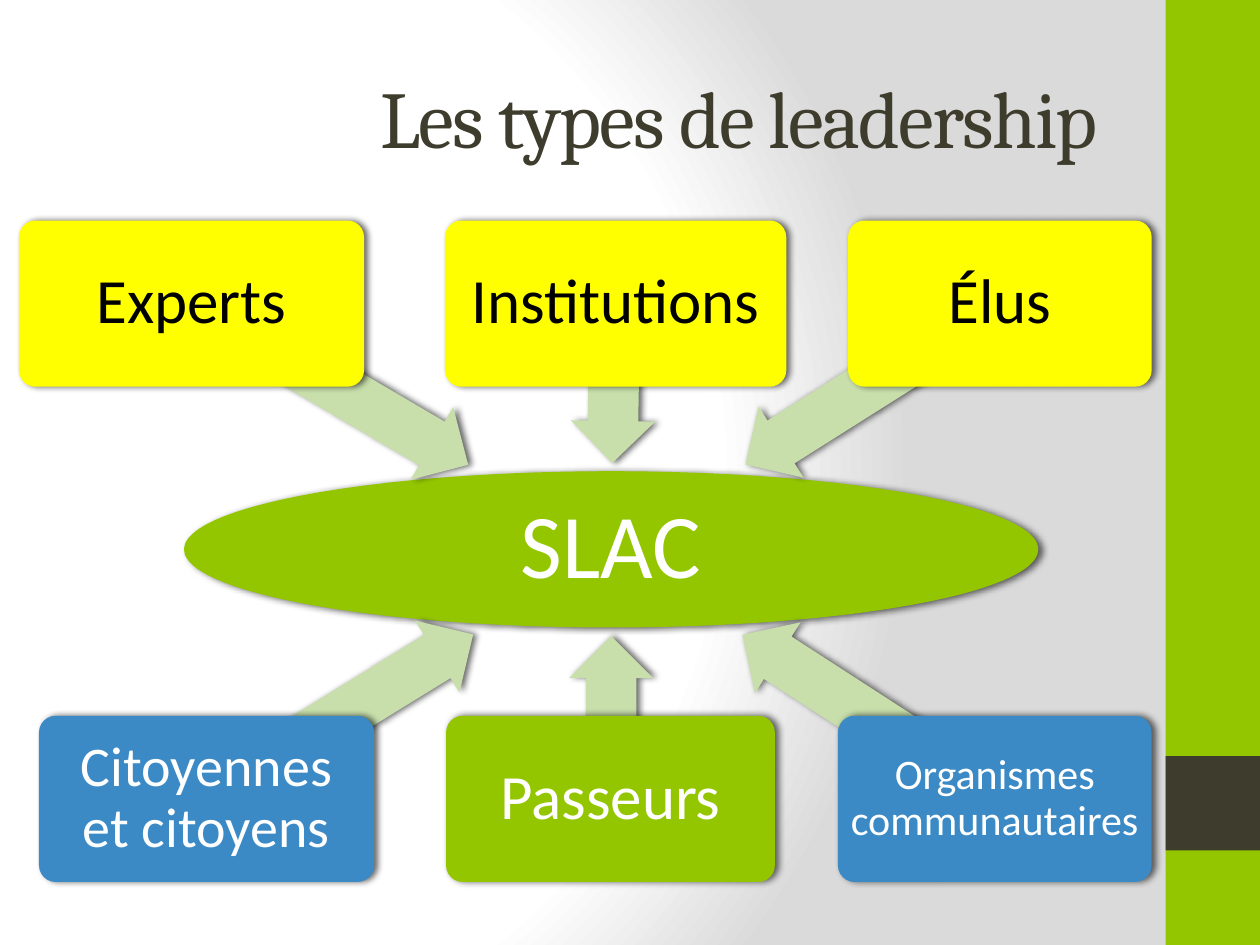
from dataclasses import dataclass

from pptx import Presentation
from pptx.dml.color import RGBColor
from pptx.enum.shapes import MSO_SHAPE
from pptx.enum.text import MSO_ANCHOR, PP_ALIGN
from pptx.oxml import parse_xml
from pptx.oxml.ns import nsdecls
from pptx.util import Pt

RECT = MSO_SHAPE.RECTANGLE
OVAL = MSO_SHAPE.OVAL
ROUND = MSO_SHAPE.ROUNDED_RECTANGLE
ARROW = MSO_SHAPE.LEFT_ARROW
CENTER = PP_ALIGN.CENTER
MIDDLE = MSO_ANCHOR.MIDDLE


@dataclass(frozen=True)
class Theme:
    green: str = "94C600"
    dark: str = "3E3D2D"
    pale: str = "C8DFAB"
    yellow: str = "FFFF00"
    blue: str = "3B8AC6"
    white: str = "FFFFFF"
    black: str = "000000"
    grey: str = "DADADA"
    heading: str = "Cambria"
    body: str = "Calibri"
    title_size: float = 46
    hub_size: float = 52
    large: float = 36
    medium: float = 32
    small: float = 24


T = Theme()
BOX_H = 95
ARROW_H = 48.2
TOP_ROW = (126, 195.2)
BOTTOM_ROW = (409, 385.4)


def set_background(slide):
    slide.background.fill.gradient()
    grad = slide.element.xpath(".//p:bg//a:gradFill")[0]
    grad.clear()
    stops = "".join(
        f'<a:gs pos="{pos * 1000}"><a:srgbClr val="{color}"/></a:gs>'
        for pos, color in ((0, T.white), (75, T.white), (100, T.grey))
    )
    grad.append(parse_xml(f'<a:gsLst {nsdecls("a")}>{stops}</a:gsLst>'))
    grad.append(parse_xml(
        f'<a:path {nsdecls("a")} path="circle">'
        '<a:fillToRect l="20000" t="50000" r="100000" b="50000"/></a:path>'
    ))


def add_shadow(sp):
    sp._element.spPr.find("{*}effectLst").append(parse_xml(
        f'<a:outerShdw {nsdecls("a")} blurRad="{Pt(4)}" dist="{Pt(2)}" dir="0" '
        f'rotWithShape="0"><a:srgbClr val="{T.black}">'
        '<a:alpha val="60000"/></a:srgbClr></a:outerShdw>'
    ))


def add_shape(slide, kind, x, y, w, h, color, adj=(), rotation=0, shadow=True):
    sp = slide.shapes.add_shape(kind, Pt(x), Pt(y), Pt(w), Pt(h))
    sp.fill.solid()
    sp.fill.fore_color.rgb = RGBColor.from_string(color)
    sp.line.fill.background()
    sp.shadow.inherit = False
    sp.rotation = rotation
    for i, value in enumerate(adj):
        sp.adjustments[i] = value
    if shadow:
        add_shadow(sp)
    return sp


def write_text(sp, text, size, color, font=T.body, inset=5, line=0.9, spacing=0):
    tf = sp.text_frame
    tf.word_wrap = True
    tf.vertical_anchor = MIDDLE
    tf.margin_left = tf.margin_right = Pt(inset)
    tf.margin_top = tf.margin_bottom = Pt(inset)
    p = tf.paragraphs[0]
    p.alignment = CENTER
    p.line_spacing = line
    r = p.add_run()
    r.text = text
    r.font.size = Pt(size)
    r.font.name = font
    r.font.color.rgb = RGBColor.from_string(color)
    if spacing:
        r.font._element.set("spc", str(spacing * 100))


def add_leader(slide, row, box, arrow, text, fill, color, size=T.large, inset=5):
    box_y, arrow_y = row
    x, w = box
    arrow_x, arrow_w, rotation = arrow
    add_shape(slide, ARROW, arrow_x, arrow_y, arrow_w, ARROW_H, T.pale,
              adj=(0.6, 0.5), rotation=rotation)
    sp = add_shape(slide, ROUND, x, box_y, w, BOX_H, fill, adj=(0.1,))
    write_text(sp, text, size, color, inset=inset)


def main():
    prs = Presentation()
    prs.slide_width, prs.slide_height = Pt(720), Pt(540)
    slide = prs.slides.add_slide(prs.slide_layouts[6])
    set_background(slide)

    add_shape(slide, RECT, 666, 0, 54, 540, T.green, shadow=False)
    add_shape(slide, RECT, 666, 432, 54, 54, T.dark, shadow=False)

    title = slide.shapes.add_textbox(Pt(208), Pt(21.6), Pt(428.4), Pt(90))
    write_text(title, "Les types de leadership", T.title_size, T.dark,
               font=T.heading, line=1, spacing=-1)

    hub = add_shape(slide, OVAL, 105.1, 269.3, 488.2, 89.3, T.green)
    write_text(hub, "SLAC", T.hub_size, T.white, inset=3)

    leaders = (
        (TOP_ROW, (10.8, 197.3), (97.2, 182.9, 210.4),
         "Experts", T.yellow, T.black),
        (TOP_ROW, (254.2, 195.1), (305.3, 90.7, 271),
         "Institutions", T.yellow, T.black),
        (TOP_ROW, (484.6, 173.5), (412.6, 172.8, 327.7),
         "Élus", T.yellow, T.black),
        (BOTTOM_ROW, (478.8, 179.3), (410.4, 172.1, 32.9),
         "Organismes communautaires", T.blue, T.white, T.small, 3.6),
        (BOTTOM_ROW, (254.9, 187.9), (303.1, 92.2, 90),
         "Passeurs", T.green, T.white),
        (BOTTOM_ROW, (22.3, 191.5), (104.4, 179.3, 148.4),
         "Citoyennes et citoyens", T.blue, T.white, T.medium),
    )
    for leader in leaders:
        add_leader(slide, *leader)

    prs.save("out.pptx")


if __name__ == "__main__":
    main()
